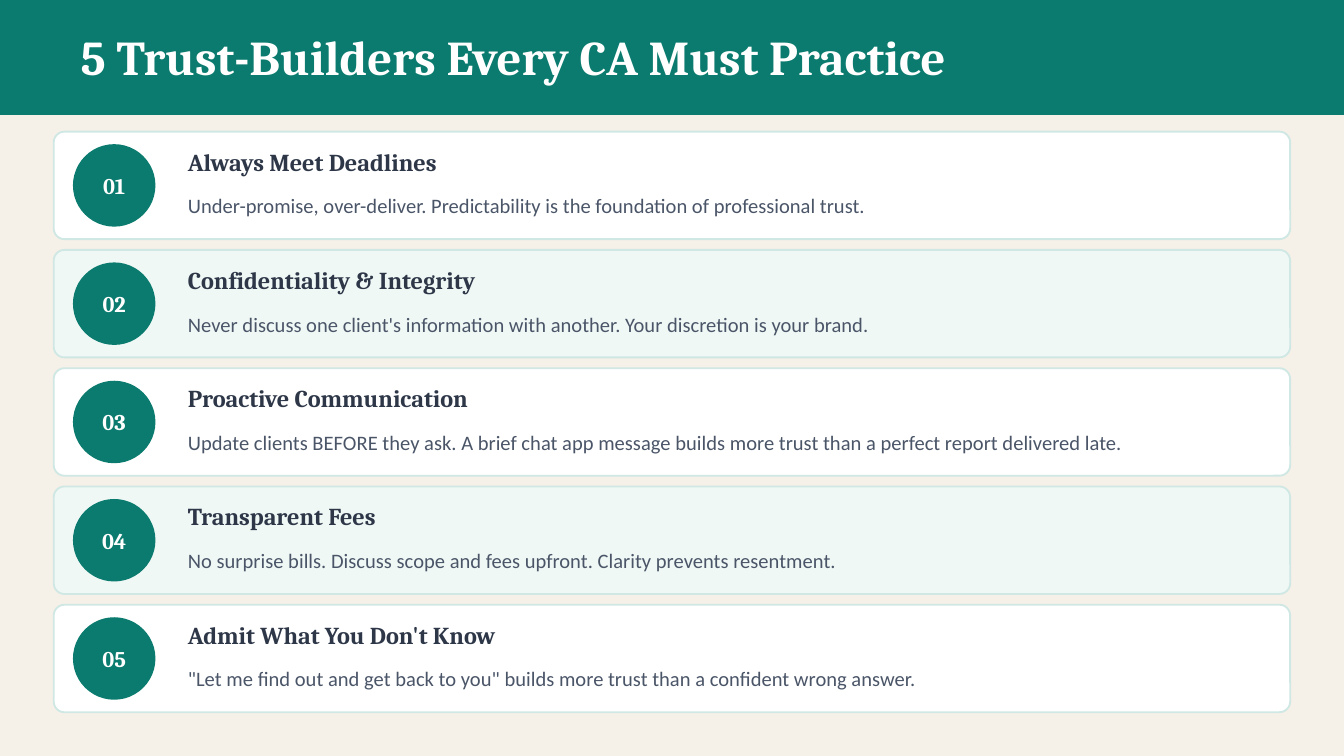
from pptx import Presentation
from pptx.dml.color import RGBColor
from pptx.enum.shapes import MSO_SHAPE as SHAPE
from pptx.enum.text import MSO_ANCHOR as ANCHOR, MSO_AUTO_SIZE as AUTO, PP_ALIGN as ALIGN
from pptx.util import Pt

TEAL, MINT, BORDER = "0A7B6E", "F0F8F6", "D0E8E4"
WHITE, CREAM, INK, GREY = "FFFFFF", "F5F0E8", "2D3748", "4A5568"
SERIF, SANS = "Cambria", "Calibri"

HABITS = [
    ("Always Meet Deadlines",
     "Under-promise, over-deliver. Predictability is the foundation of professional trust."),
    ("Confidentiality & Integrity",
     "Never discuss one client's information with another. Your discretion is your brand."),
    ("Proactive Communication",
     "Update clients BEFORE they ask. A brief chat app message builds more trust "
     "than a perfect report delivered late."),
    ("Transparent Fees",
     "No surprise bills. Discuss scope and fees upfront. Clarity prevents resentment."),
    ("Admit What You Don't Know",
     '"Let me find out and get back to you" builds more trust than a confident wrong answer.'),
]


def color(value):
    return RGBColor.from_string(value)


def write(sp, text, size=11, font=SANS, fill=GREY, bold=False, align=ALIGN.LEFT, inset=None):
    tf = sp.text_frame
    tf.word_wrap = True
    tf.auto_size = AUTO.NONE
    tf.vertical_anchor = ANCHOR.MIDDLE
    if inset is not None:
        tf.margin_left = tf.margin_right = tf.margin_top = tf.margin_bottom = Pt(inset)
    p = tf.paragraphs[0]
    p.alignment = align
    r = p.add_run()
    r.text = text
    r.font.size, r.font.name, r.font.bold = Pt(size), font, bold
    r.font.color.rgb = color(fill)


class Deck:
    def __init__(self, prs):
        self.slide = prs.slides.add_slide(prs.slide_layouts[5])
        background = self.slide.background.fill
        background.solid()
        background.fore_color.rgb = color(CREAM)

    def shape(self, kind, x, y, w, h, fill, line):
        sp = self.slide.shapes.add_shape(kind, Pt(x), Pt(y), Pt(w), Pt(h))
        sp.shadow.inherit = False
        sp.fill.solid()
        sp.fill.fore_color.rgb = color(fill)
        sp.line.color.rgb = color(line)
        sp.line.width = Pt(1)
        return sp

    def title(self, text, x, y, w, h, band_height):
        band = self.shape(SHAPE.RECTANGLE, 0, 0, 720, band_height, TEAL, TEAL)
        sp = self.slide.shapes.title
        sp.left, sp.top, sp.width, sp.height = Pt(x), Pt(y), Pt(w), Pt(h)
        write(sp, text, size=26, font=SERIF, fill=WHITE, bold=True)
        band._element.addnext(sp._element)  # title in front of its band

    def card(self, x, y, w, h, fill):
        sp = self.shape(SHAPE.ROUNDED_RECTANGLE, x, y, w, h, fill, BORDER)
        sp.adjustments[0] = 0.1

    def badge(self, text, x, y, size):
        sp = self.shape(SHAPE.OVAL, x, y, size, size, TEAL, TEAL)
        write(sp, text, size=12, font=SERIF, fill=WHITE, bold=True,
              align=ALIGN.CENTER, inset=0)

    def text(self, text, x, y, w, h, **style):
        sp = self.slide.shapes.add_textbox(Pt(x), Pt(y), Pt(w), Pt(h))
        write(sp, text, **style)


def main():
    prs = Presentation()
    prs.slide_width, prs.slide_height = Pt(720), Pt(405)
    deck = Deck(prs)

    # Header
    deck.title("5 Trust-Builders Every CA Must Practice", 36, 8.64, 648, 43.2, 61.2)

    # One card per habit, alternating fills
    top, pitch = 70.56, 63.36
    for i, (heading, detail) in enumerate(HABITS):
        y = top + i * pitch
        deck.card(28.8, y, 662.4, 57.6, MINT if i % 2 else WHITE)
        deck.badge(f"{i + 1:02}", 39.6, y + 7.2, 43.2)
        deck.text(heading, 93.6, y + 4.32, 216, 23.04,
                  size=13, font=SERIF, fill=INK, bold=True)
        deck.text(detail, 93.6, y + 25.92, 583.2, 27.36)

    prs.save("out.pptx")


if __name__ == "__main__":
    main()
